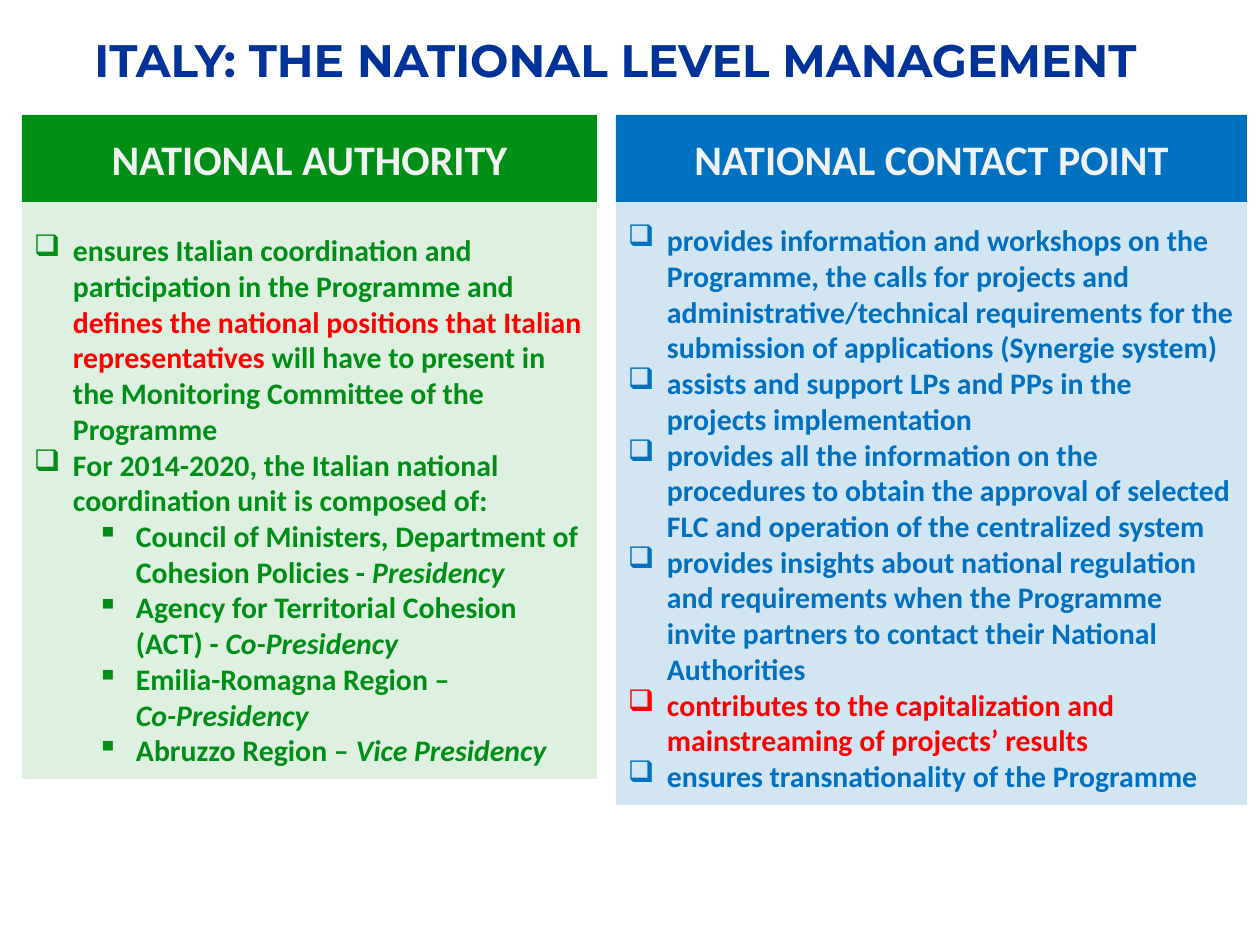
from dataclasses import dataclass

from lxml.etree import SubElement
from pptx import Presentation
from pptx.dml.color import RGBColor as Rgb
from pptx.enum.shapes import MSO_SHAPE as Shape
from pptx.enum.text import MSO_ANCHOR as Anchor, MSO_AUTO_SIZE as AutoSize, PP_ALIGN as Align
from pptx.oxml.ns import qn
from pptx.util import Pt

EMU_PER_PX = 914400 / 126


@dataclass(frozen=True)
class Theme:
    heading_font: str = "Montserrat"
    body_font: str = "Calibri"
    title_size: int = 26
    header_size: int = 24
    body_size: int = 17
    navy: str = "003399"
    green: str = "008F16"
    blue: str = "0070C0"
    red: str = "FF0000"
    pale: str = "F2F2F2"


THEME = Theme()
LEVELS = [("❑", 39), ("▪", 102)]
HANGING = 39
HEADER_HEIGHT = 87

AUTHORITY_DUTIES = [
    (0, [("ensures Italian coordination and participation in the Programme and ", {}),
         ("defines the national positions that Italian representatives ", {"color": THEME.red}),
         ("will have to present in the Monitoring Committee of the Programme", {})]),
    (0, [("For 2014-2020, the Italian national coordination unit is composed of:", {})]),
    (1, [("Council of Ministers, Department of Cohesion Policies - ", {}),
         ("Presidency", {"italic": True})]),
    (1, [("Agency for Territorial Cohesion (ACT) - ", {}),
         ("Co-Presidency", {"italic": True})]),
    (1, [("Emilia-Romagna Region – \n", {}), ("Co-Presidency", {"italic": True})]),
    (1, [("Abruzzo Region – ", {}), ("Vice Presidency", {"italic": True})]),
]

CONTACT_DUTIES = [
    (0, [("provides information and workshops on the Programme, the calls for projects and "
          "administrative/technical requirements for the submission of applications "
          "(Synergie system)", {})]),
    (0, [("assists and support LPs and PPs in the projects implementation", {})]),
    (0, [("provides all the information on the procedures to obtain the approval of selected "
          "FLC and operation of the centralized system", {})]),
    (0, [("provides insights about national regulation and requirements when the Programme "
          "invite partners to contact their National Authorities", {})]),
    (0, [("contributes to the capitalization and mainstreaming of projects’ results",
          {"color": THEME.red})]),
    (0, [("ensures transnationality of the Programme", {})]),
]


def px(length):
    return round(length * EMU_PER_PX)


def apply(target, values):
    for name, value in values.items():
        setattr(target, name, value)


def style_font(font, family, size, color, italic=False):
    apply(font, {"name": family, "size": Pt(size), "bold": True, "italic": italic})
    font.color.rgb = Rgb.from_string(color)


def add_band(slide, box, color, opacity=100):
    band = slide.shapes.add_shape(Shape.RECTANGLE, *map(px, box))
    band.shadow.inherit = False
    band.line.fill.background()
    band.fill.solid()
    band.fill.fore_color.rgb = Rgb.from_string(color)
    if opacity < 100:
        tint = band.fill._xPr.find(qn("a:solidFill"))[0]
        SubElement(tint, qn("a:alpha"), val=str(opacity * 1000))
    return band.text_frame


def add_duty(paragraph, level, parts, color):
    bullet, margin = LEVELS[level]
    apply(paragraph, {"level": level, "alignment": Align.LEFT})
    properties = paragraph._p.get_or_add_pPr()
    properties.set("marL", str(px(margin)))
    properties.set("indent", str(-px(HANGING)))
    SubElement(properties, qn("a:buChar"), char=bullet)
    for words, look in parts:
        run = paragraph.add_run()
        run.text = words.rstrip("\n")
        style_font(run.font, THEME.body_font, THEME.body_size, **{"color": color, **look})
        if words.endswith("\n"):
            paragraph.add_line_break()


def build_title(slide, box, words):
    title = slide.shapes.title
    apply(title, dict(zip(("left", "top", "width", "height"), map(px, box))))
    frame = title.text_frame
    apply(frame, {"text": words, "word_wrap": True, "vertical_anchor": Anchor.TOP,
                  "auto_size": AutoSize.SHAPE_TO_FIT_TEXT})
    heading = frame.paragraphs[0]
    heading.alignment = Align.CENTER
    style_font(heading.runs[0].font, THEME.heading_font, THEME.title_size, THEME.navy)


def build_column(slide, box, heading, duties, color, opacity, top_inset):
    left, top, width, height = box
    header = add_band(slide, (left, top, width, HEADER_HEIGHT), color)
    apply(header, {"text": heading, "word_wrap": True, "vertical_anchor": Anchor.MIDDLE})
    header_line = header.paragraphs[0]
    header_line.alignment = Align.CENTER
    style_font(header_line.runs[0].font, THEME.body_font, THEME.header_size, THEME.pale)

    body_box = (left, top + HEADER_HEIGHT, width, height - HEADER_HEIGHT)
    body = add_band(slide, body_box, color, opacity)
    apply(body, {"word_wrap": True, "vertical_anchor": Anchor.TOP,
                 "auto_size": AutoSize.SHAPE_TO_FIT_TEXT,
                 "margin_left": px(12), "margin_right": px(12),
                 "margin_top": px(top_inset), "margin_bottom": px(6)})
    for index, (level, parts) in enumerate(duties):
        paragraph = body.add_paragraph() if index else body.paragraphs[0]
        add_duty(paragraph, level, parts, color)


def main():
    deck = Presentation()
    apply(deck, {"slide_width": px(1260), "slide_height": px(945)})
    slide = deck.slides.add_slide(deck.slide_layouts[5])
    build_title(slide, (-14, 26, 1260, 68), "ITALY: THE NATIONAL LEVEL MANAGEMENT")
    build_column(slide, (616, 115, 631, 690), "NATIONAL CONTACT POINT",
                 CONTACT_DUTIES, THEME.blue, 18, 20)
    build_column(slide, (22, 115, 575, 664), "NATIONAL AUTHORITY",
                 AUTHORITY_DUTIES, THEME.green, 13, 30)
    deck.save("out.pptx")


if __name__ == "__main__":
    main()
